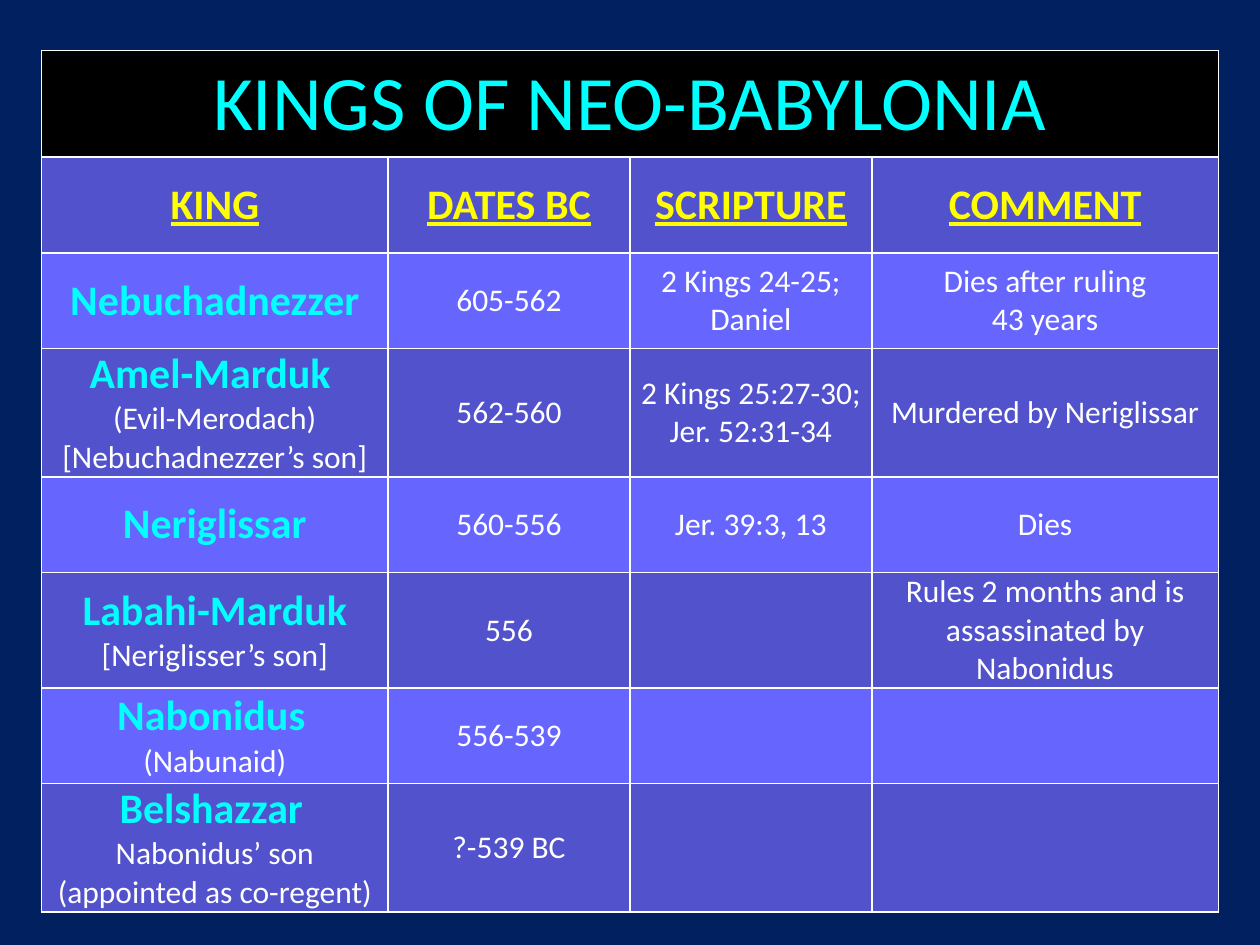
from dataclasses import dataclass

from lxml import etree
from pptx import Presentation
from pptx.dml.color import RGBColor
from pptx.enum.text import MSO_ANCHOR, PP_ALIGN
from pptx.oxml.ns import qn
from pptx.table import _Cell
from pptx.util import Inches, Pt

CENTER = PP_ALIGN.CENTER
MIDDLE = MSO_ANCHOR.MIDDLE


@dataclass(frozen=True)
class TextStyle:
    size: int
    color: str
    bold: bool = False
    underline: bool = False


@dataclass(frozen=True)
class Theme:
    font: str = "Calibri"
    background: str = "002060"
    title_fill: str = "000000"
    dark_band: str = "5252CC"
    light_band: str = "6666FF"
    border: str = "FFFFFF"
    border_width: float = 1
    title: TextStyle = TextStyle(44, "00FFFF")
    heading: TextStyle = TextStyle(24, "FFFF00", bold=True, underline=True)
    name: TextStyle = TextStyle(24, "00FFFF", bold=True)
    body: TextStyle = TextStyle(18, "FFFFFF")


@dataclass(frozen=True)
class Span:
    text: str
    style: TextStyle


@dataclass(frozen=True)
class King:
    name: str
    dates: str
    scripture: str = ""
    comment: str = ""
    name_suffix: str = ""
    notes: str = ""


THEME = Theme()
TITLE = "KINGS OF NEO-BABYLONIA"
HEADINGS = ("KING", "DATES BC", "SCRIPTURE", "COMMENT")
COLUMN_WIDTHS = (2.75, 1.92, 1.92, 2.75)
ROW_HEIGHTS = (0.75, *[0.76] * 6, 1.01)
KINGS = (
    King("Nebuchadnezzer", "605-562", "2 Kings 24-25; Daniel", "Dies after ruling\n43 years"),
    King("Amel-Marduk ", "562-560", "2 Kings 25:27-30; Jer. 52:31-34",
         "Murdered by Neriglissar", notes="(Evil-Merodach)\n[Nebuchadnezzer’s son]"),
    King("Neriglissar", "560-556", "Jer. 39:3, 13", "Dies"),
    King("Labahi-Marduk ", "556", comment="Rules 2 months and is assassinated by Nabonidus",
         name_suffix="[Neriglisser’s son]"),
    King("Nabonidus", "556-539", name_suffix=" ", notes="(Nabunaid)"),
    King("Belshazzar", "?-539 BC", name_suffix=" ",
         notes="Nabonidus’ son (appointed as co-regent)"),
)

Lines = list[list[Span]]


def text_lines(text: str, style: TextStyle) -> Lines:
    return [[Span(line, style)] for line in text.splitlines()]


def king_lines(king: King) -> Lines:
    name_line = [Span(king.name, THEME.name)]
    if king.name_suffix:
        name_line.append(Span(king.name_suffix, THEME.body))
    return [name_line, *text_lines(king.notes, THEME.body)]


def king_row(king: King) -> list[Lines]:
    details = (king.dates, king.scripture, king.comment)
    return [king_lines(king), *(text_lines(text, THEME.body) for text in details)]


def draw_borders(cell: _Cell) -> None:
    properties = cell._tc.get_or_add_tcPr()
    for side in ("a:lnL", "a:lnR", "a:lnT", "a:lnB"):
        line = etree.SubElement(properties, qn(side), w=str(Pt(THEME.border_width)))
        fill = etree.SubElement(line, qn("a:solidFill"))
        etree.SubElement(fill, qn("a:srgbClr"), val=THEME.border)


def write_lines(cell: _Cell, lines: Lines) -> None:
    text_frame = cell.text_frame
    for index, spans in enumerate(lines):
        paragraph = text_frame.add_paragraph() if index else text_frame.paragraphs[0]
        paragraph.alignment = CENTER
        for span in spans:
            run = paragraph.add_run()
            run.text = span.text
            run.font.name = THEME.font
            run.font.size = Pt(span.style.size)
            run.font.bold = span.style.bold
            run.font.underline = span.style.underline
            run.font.color.rgb = RGBColor.from_string(span.style.color)


def draw_cell(cell: _Cell, lines: Lines, fill: str) -> None:
    draw_borders(cell)
    cell.fill.solid()
    cell.fill.fore_color.rgb = RGBColor.from_string(fill)
    cell.vertical_anchor = MIDDLE
    write_lines(cell, lines)


def main() -> None:
    presentation = Presentation()
    presentation.slide_width = Inches(10)
    presentation.slide_height = Inches(7.5)
    slide = presentation.slides.add_slide(presentation.slide_layouts[6])
    slide.background.fill.solid()
    slide.background.fill.fore_color.rgb = RGBColor.from_string(THEME.background)

    table_height = Inches(6.8)
    table_shape = slide.shapes.add_table(
        len(ROW_HEIGHTS), len(COLUMN_WIDTHS),
        Inches(0.33), Inches(0.4), Inches(9.33), table_height)
    table = table_shape.table
    table.first_row = False
    table.horz_banding = False
    for column, width in zip(table.columns, COLUMN_WIDTHS):
        column.width = Inches(width)
    for row, height in zip(table.rows, ROW_HEIGHTS):
        row.height = Inches(height)
    table_shape.height = table_height

    table.cell(0, 0).merge(table.cell(0, len(COLUMN_WIDTHS) - 1))
    title_row = [text_lines(TITLE, THEME.title), *[[] for _ in HEADINGS[1:]]]
    for cell, lines in zip(table.rows[0].cells, title_row):
        draw_cell(cell, lines, THEME.title_fill)

    heading_row = [text_lines(heading, THEME.heading) for heading in HEADINGS]
    for index, contents in enumerate([heading_row, *map(king_row, KINGS)], start=1):
        fill = THEME.dark_band if index % 2 else THEME.light_band
        for cell, lines in zip(table.rows[index].cells, contents):
            draw_cell(cell, lines, fill)
            cell.margin_left = cell.margin_right = Inches(0.07)
            cell.margin_top = cell.margin_bottom = Inches(0)

    presentation.save("out.pptx")


if __name__ == "__main__":
    main()
